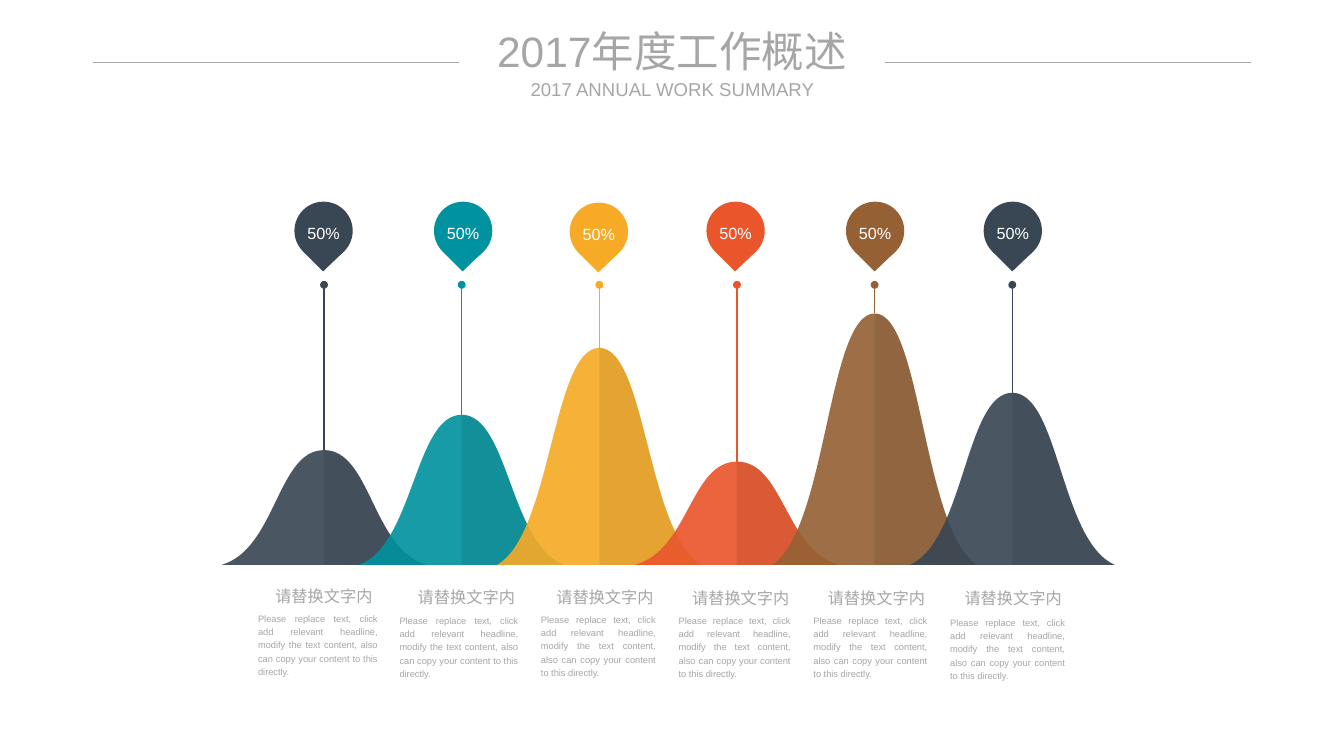
from lxml import etree
from pptx import Presentation
from pptx.dml.color import RGBColor
from pptx.enum.shapes import MSO_CONNECTOR, MSO_SHAPE
from pptx.enum.text import MSO_ANCHOR, MSO_AUTO_SIZE, PP_ALIGN
from pptx.oxml.ns import qn
from pptx.util import Inches, Pt

LINE = MSO_CONNECTOR.STRAIGHT
OVAL = MSO_SHAPE.OVAL
MIDDLE, TOP = MSO_ANCHOR.MIDDLE, MSO_ANCHOR.TOP
CENTER, JUSTIFY = PP_ALIGN.CENTER, PP_ALIGN.JUSTIFY
GROW = MSO_AUTO_SIZE.SHAPE_TO_FIT_TEXT

COLORS = {
    "slate": "394754", "teal": "00939F", "amber": "F6AA26",
    "red": "EA552B", "brown": "956134",
    "slate dark": "1D242A", "teal dark": "004950", "amber dark": "885906",
    "red dark": "7E250C", "brown dark": "4A301A",
    "gray": "A6A6A6", "white": "FFFFFF",
}

# color, hill top, pin left, pin top, head left, head top,
# body left, body top, body width
ITEMS = [
    ("slate", 4.71, 3.08, 2.11, 2.88, 6.09, 2.7, 6.39, 1.25),
    ("teal", 4.34, 4.54, 2.11, 4.37, 6.1, 4.18, 6.41, 1.24),
    ("amber", 3.64, 5.96, 2.12, 5.82, 6.1, 5.66, 6.4, 1.2),
    ("red", 4.83, 7.39, 2.11, 7.24, 6.11, 7.1, 6.41, 1.17),
    ("brown", 3.28, 8.85, 2.11, 8.66, 6.11, 8.51, 6.41, 1.19),
    ("slate", 4.11, 10.29, 2.11, 10.09, 6.12, 9.94, 6.43, 1.2),
]
HEAD = "请替换文字内"
BODY = ("Please replace text, click add relevant headline, modify the text "
        "content, also can copy your content to this directly.")
FIRST, STEP = 3.39, 1.44
BASE, HALF = 5.91, 1.07
DOT = 2.98


def rgb(name):
    return RGBColor.from_string(COLORS[name])


def paint(shape, color, alpha=100):
    shape.shadow.inherit = False
    shape.fill.solid()
    shape.fill.fore_color.rgb = rgb(color)
    shape.line.fill.background()
    if alpha < 100:
        tone = shape._element.spPr.find(qn("a:solidFill"))[0]
        etree.SubElement(tone, qn("a:alpha"), val=str(alpha * 1000))


def add_area(shapes, points, color, alpha=100, bends=None):
    """Draw a closed outline; bends maps a side's index to its two handles."""
    spots = [(Inches(x), Inches(y)) for x, y in points]
    pen = shapes.build_freeform(*spots[0])
    pen.add_line_segments(spots[1:], close=True)
    area = pen.convert_to_shape()
    paint(area, color, alpha)
    left = min(x for x, _ in spots)
    top = min(y for _, y in spots)
    sides = list(area._element.iter(qn("a:lnTo")))
    for i, handles in (bends or {}).items():
        side = sides[i]
        side.tag = qn("a:cubicBezTo")
        for n, (x, y) in enumerate(handles):
            pt = etree.Element(qn("a:pt"), x=str(Inches(x) - left),
                               y=str(Inches(y) - top))
            side.insert(n, pt)


def add_hill(slide, x, top, color):
    shapes = slide.shapes.add_group_shape().shapes
    peak, foot = (x, top), (x, BASE)
    left, right = (x - HALF, BASE), (x + HALF, BASE)
    low = top + 0.86 * (BASE - top)
    fall = [(x - 0.49, top), (x - 0.5, low)]
    rise = [(x + 0.5, low), (x + 0.49, top)]
    add_area(shapes, [peak, left, foot, right, peak], color, 91,
             {0: fall, 3: rise})
    add_area(shapes, [right, peak, foot, right], color + " dark", 15,
             {0: rise})


def write(shape, text, size, color, align, anchor=TOP, space=1.2):
    frame = shape.text_frame
    frame.margin_left = frame.margin_right = 0
    frame.margin_top = frame.margin_bottom = 0
    frame.vertical_anchor = anchor
    frame.text = text
    line = frame.paragraphs[0]
    line.alignment = align
    if space:
        line.line_spacing = space
    font = line.runs[0].font
    font.size, font.name = Pt(size), "Arial"
    font.color.rgb = rgb(color)


def add_text(shapes, box, text, size, align, wrap=True, **style):
    shape = shapes.add_textbox(*map(Inches, box))
    write(shape, text, size, "gray", align, **style)
    shape.text_frame.word_wrap = wrap
    shape.text_frame.auto_size = GROW


def add_pin(slide, left, top, color):
    shapes = slide.shapes.add_group_shape().shapes
    disc = shapes.add_shape(OVAL, *map(Inches, (left, top, 0.61, 0.61)))
    paint(disc, color)
    write(disc, "50%", 12.2, "white", CENTER, MIDDLE)
    edge = top + 0.52
    start = (left + 0.52, edge)
    add_area(shapes, [start, (left + 0.3, edge + 0.21), (left + 0.09, edge),
                      start], color)


def add_line(shapes, start, end, color, width, dot=False):
    line = shapes.add_connector(LINE, *map(Inches, start + end))
    line.line.color.rgb = rgb(color)
    line.line.width = Pt(width)
    if dot:
        etree.SubElement(line.line._get_or_add_ln(), qn("a:headEnd"),
                         type="oval")
    etree.SubElement(line._element.spPr, qn("a:effectLst"))


def add_note(slide, head, head_top, body, body_top, wide):
    shapes = slide.shapes.add_group_shape().shapes
    add_text(shapes, (head, head_top, 1.02, 0.25), HEAD, 12.2, JUSTIFY,
             wrap=False)
    add_text(shapes, (body, body_top, wide, 0.69), BODY, 7, JUSTIFY)


def add_title(slide):
    add_text(slide.shapes, (4.87, 0.26, 4.32, 0.54), "2017年度工作概述", 32,
             CENTER, anchor=MIDDLE, space=None)
    add_text(slide.shapes, (5.5, 0.81, 3.07, 0.24),
             "2017 ANNUAL WORK SUMMARY", 14, CENTER, anchor=MIDDLE,
             space=None)
    rules = slide.shapes.add_group_shape().shapes
    for left in (0.97, 9.26):
        add_line(rules, (left, 0.65), (left + 3.83, 0.65), "gray", 0.5)


def main():
    deck = Presentation()
    deck.slide_width, deck.slide_height = Inches(14.06), Inches(7.91)
    slide = deck.slides.add_slide(deck.slide_layouts[6])
    peaks = [FIRST + STEP * i for i in range(len(ITEMS))]

    for x, (color, top, *_) in zip(peaks, ITEMS):
        add_hill(slide, x, top, color)
    for color, _, left, top, *_ in ITEMS:
        add_pin(slide, left, top, color)
    for x, (color, top, *_) in zip(peaks, ITEMS):
        add_line(slide.shapes, (x, DOT), (x, top), color, 1, dot=True)
    for item in ITEMS:
        add_note(slide, *item[4:])
    add_title(slide)
    deck.save("out.pptx")


if __name__ == "__main__":
    main()
